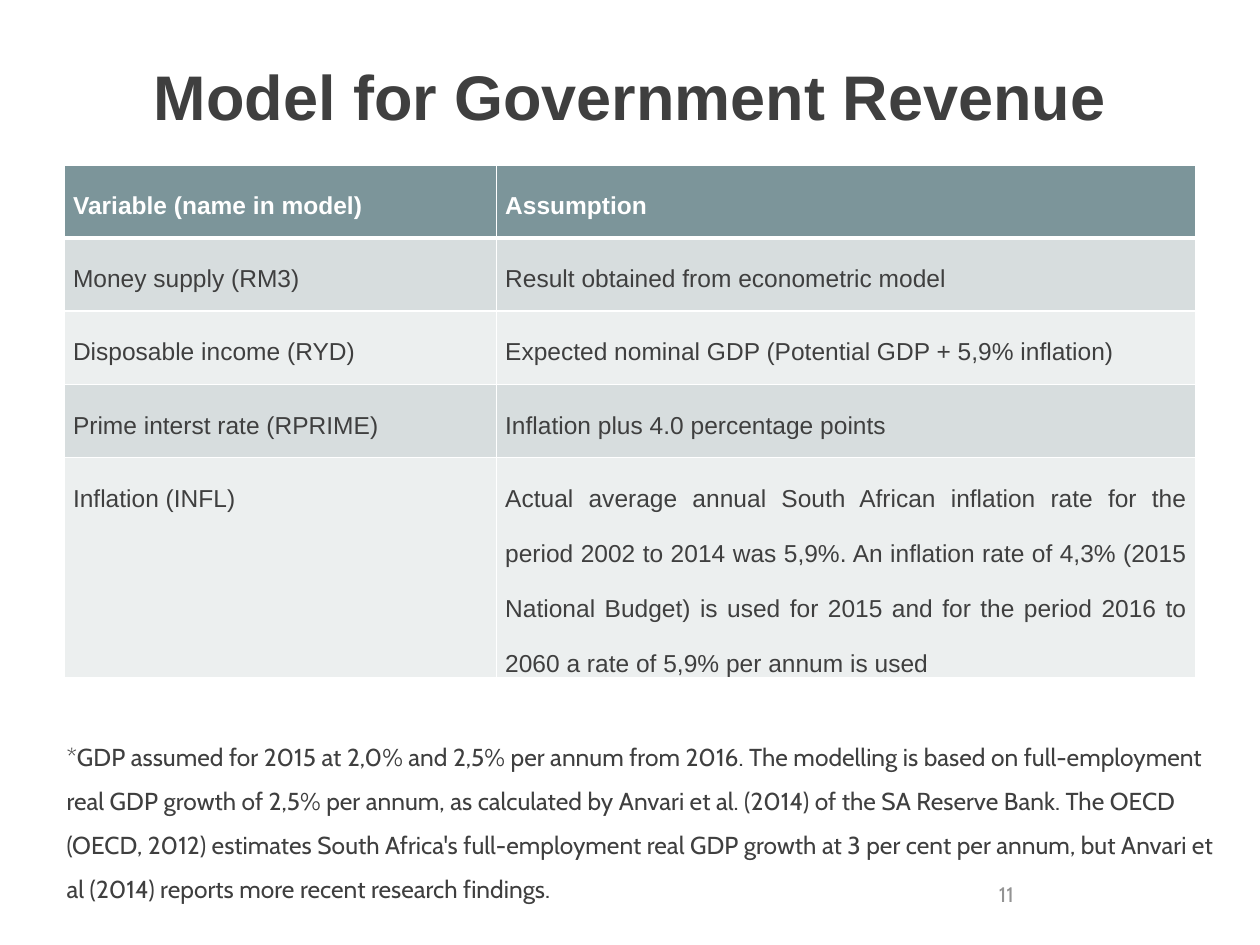
from lxml import etree
from pptx import Presentation
from pptx import util as u
from pptx.dml import color
from pptx.enum import text
from pptx.oxml import ns

COLORS = {
    "ink": "3F3F3F",
    "white": "FFFFFF",
    "header": "7C959A",
    "band_dark": "D7DDDE",
    "band_light": "ECEFEF",
    "page": "939393",
}
ASSUMPTIONS = [
    ("Variable (name in model)", "Assumption"),
    ("Money supply (RM3)", "Result obtained from econometric model"),
    ("Disposable income (RYD)", "Expected nominal GDP (Potential GDP + 5,9% inflation)"),
    ("Prime interst rate (RPRIME)", "Inflation plus 4.0 percentage points"),
    ("Inflation (INFL)",
     "Actual average annual South African inflation rate for the period 2002 to 2014 "
     "was 5,9%. An inflation rate of 4,3% (2015 National Budget) is used for 2015 and "
     "for the period 2016 to 2060 a rate of 5,9% per annum is used"),
]
FOOTNOTE = (
    "*GDP assumed for 2015 at 2,0% and 2,5% per annum from 2016. The modelling is based "
    "on full-employment real GDP growth of 2,5% per annum, as calculated by Anvari et al. "
    "(2014) of the SA Reserve Bank. The OECD (OECD, 2012) estimates South Africa's "
    "full-employment real GDP growth at 3 per cent per annum, but Anvari et al (2014) "
    "reports more recent research findings."
)


def rgb(name):
    """Return the named palette colour."""
    return color.RGBColor.from_string(COLORS[name])


def inches(*lengths):
    """Convert several lengths to inches."""
    return [u.Inches(length) for length in lengths]


def style(paragraph, font_name, size, ink, bold=False, spacing=None, align=None):
    """Format a whole paragraph."""
    paragraph.font.name = font_name
    paragraph.font.size = u.Pt(size)
    paragraph.font.bold = bold
    paragraph.font.color.rgb = rgb(ink)
    paragraph.line_spacing = spacing
    paragraph.alignment = align


def add_borders(cell, bottom_width):
    """Draw white borders around a cell, with its own bottom width."""
    properties = cell._tc.get_or_add_tcPr()
    widths = {"lnL": 1, "lnR": 1, "lnT": 1, "lnB": bottom_width}
    for position, (side, width) in enumerate(widths.items()):
        line = etree.Element(ns.qn(f"a:{side}"), w=str(u.Pt(width)))
        fill = etree.SubElement(line, ns.qn("a:solidFill"))
        etree.SubElement(fill, ns.qn("a:srgbClr"), val=COLORS["white"])
        properties.insert(position, line)


def place_title(slide, box):
    """Place the slide heading in its box."""
    title = slide.shapes.title
    title.left, title.top, title.width, title.height = inches(*box)
    title.text_frame.text = "Model for Government Revenue"
    title.text_frame.vertical_anchor = text.MSO_ANCHOR.MIDDLE
    style(title.text_frame.paragraphs[0], "Arial", 36, "ink", True, 0.9,
          text.PP_ALIGN.CENTER)


def place_assumptions(slide, box):
    """Place the table of model variables in its box."""
    table = slide.shapes.add_table(len(ASSUMPTIONS), 2, *inches(*box)).table
    for column, width in zip(table.columns, (3.43, box[2] - 3.43)):
        column.width = u.Inches(width)
    for row, height in zip(table.rows, (0.58, 0.58, 0.58, 0.58, 1.58)):
        row.height = u.Inches(height)
    for row_index, entries in enumerate(ASSUMPTIONS):
        is_header = row_index == 0
        band = "header" if is_header else ("band_light", "band_dark")[row_index % 2]
        for column_index, entry in enumerate(entries):
            cell = table.cell(row_index, column_index)
            cell.text = entry
            cell.margin_left = cell.margin_right = u.Inches(0.07)
            cell.margin_top = cell.margin_bottom = 0
            cell.fill.solid()
            cell.fill.fore_color.rgb = rgb(band)
            add_borders(cell, 3 if is_header else 1)
            style(cell.text_frame.paragraphs[0], "Arial", 14,
                  "white" if is_header else "ink", is_header, 2.0,
                  text.PP_ALIGN.JUSTIFY)


def place_note(slide, box, wording, size, ink, spacing=None):
    """Place a wrapped text note in its box."""
    frame = slide.shapes.add_textbox(*inches(*box)).text_frame
    frame.word_wrap = True
    frame.text = wording
    style(frame.paragraphs[0], "Cabin", size, ink, spacing=spacing)


def main():
    """Build and save the slide."""
    deck = Presentation()
    deck.slide_width, deck.slide_height = inches(10, 7.5)
    slide = deck.slides.add_slide(deck.slide_layouts[5])
    place_assumptions(slide, (0.51, 1.31, 8.98, 4.2))
    place_title(slide, (-0.12, 0.36, 10.24, 0.87))
    place_note(slide, (7.83, 6.95, 1.24, 0.4), "11", 12, "page")
    place_note(slide, (0.43, 5.72, 9.37, 1.51), FOOTNOTE, 14, "ink", 1.5)
    deck.save("out.pptx")


if __name__ == "__main__":
    main()
